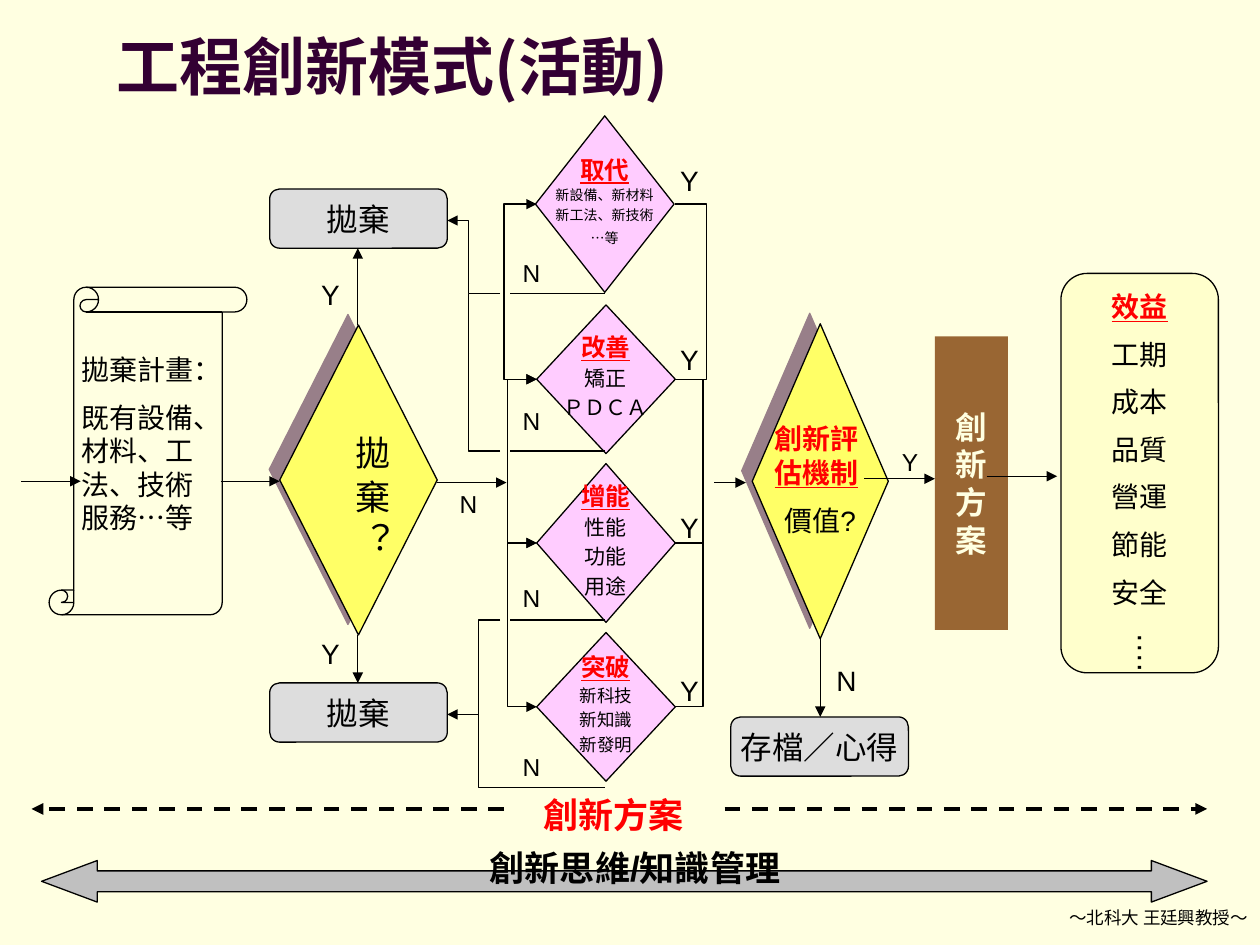
from dataclasses import dataclass, replace
from typing import Optional, Sequence

from lxml import etree
from pptx import Presentation
from pptx import util as u
from pptx.dml.color import RGBColor
from pptx.enum import dml, shapes, text
from pptx.oxml import ns

BLACK, RED, PURPLE = "000000", "FF0000", "330033"
GREY, PINK, YELLOW, CREAM = "DDDDDD", "FFCCFF", "FFFF66", "FFFFE1"
KIND = shapes.MSO_SHAPE
LEFT, CENTER, RIGHT = text.PP_ALIGN.LEFT, text.PP_ALIGN.CENTER, text.PP_ALIGN.RIGHT


@dataclass
class Line:
    words: str
    size: float
    color: str = BLACK
    bold: bool = False
    underline: bool = False
    align: int = CENTER
    spacing: float = 1.0
    gap: float = 0.5  # space before, as a share of the font size
    font: str = "Arial"
    underlined_end: str = ""


@dataclass
class Box:
    left: float
    top: float
    width: float
    height: float


@dataclass
class Route:
    points: Sequence[tuple]
    start_arrow: bool = False
    end_arrow: bool = False
    width: float = 0.75
    dashed: bool = False


def rgb(value: str) -> RGBColor:
    return RGBColor.from_string(value)


def place(box: Box) -> list:
    return [u.Inches(v) for v in (box.left, box.top, box.width, box.height)]


def write(shape, lines: Sequence[Line], wrap: bool) -> None:
    frame = shape.text_frame
    frame.word_wrap = wrap
    frame.text = "\n".join(line.words for line in lines)
    for paragraph, line in zip(frame.paragraphs, lines):
        paragraph.alignment = line.align
        paragraph.line_spacing = line.spacing
        paragraph.space_before = u.Pt(line.size * line.gap)
        if line.underlined_end:
            paragraph.add_run().text = line.underlined_end
        for index, run in enumerate(paragraph.runs):
            run.font.name = line.font
            run.font.size = u.Pt(line.size)
            run.font.bold = line.bold
            run.font.underline = line.underline or index > 0
            run.font.color.rgb = rgb(line.color)


def add_label(slide, box: Box, lines: Sequence[Line], vertical: bool = False):
    shape = slide.shapes.add_textbox(*place(box))
    write(shape, lines, True)
    shape.text_frame.auto_size = text.MSO_AUTO_SIZE.SHAPE_TO_FIT_TEXT
    if vertical:
        shape.text_frame._txBody.bodyPr.set("vert", "eaVert")
    return shape


def add_block(slide, kind, box: Box, fill: Optional[str],
              lines: Sequence[Line] = (), outlined: bool = True):
    shape = slide.shapes.add_shape(kind, *place(box))
    shape.shadow.inherit = False
    if fill:
        shape.fill.solid()
        shape.fill.fore_color.rgb = rgb(fill)
    else:
        shape.fill.background()
    if outlined:
        shape.line.color.rgb = rgb(BLACK)
        shape.line.width = u.Pt(0.75)
    else:
        shape.line.fill.background()
    if lines:
        shape.text_frame.vertical_anchor = text.MSO_ANCHOR.MIDDLE
        write(shape, lines, False)
    return shape


def add_decision(slide, box: Box) -> None:
    """Yellow diamond with a shadow to the upper left."""
    shape = add_block(slide, KIND.DIAMOND, box, YELLOW)
    effects = shape._element.spPr.find(ns.qn("a:effectLst"))
    shadow = etree.SubElement(effects, ns.qn("a:outerShdw"), dist=str(u.Pt(8.5)),
                              dir="13500000", algn="ctr", rotWithShape="0")
    color = etree.SubElement(shadow, ns.qn("a:srgbClr"), val=PURPLE)
    etree.SubElement(color, ns.qn("a:alpha"), val="50000")


def add_route(slide, route: Route) -> None:
    points = [(u.Inches(x), u.Inches(y)) for x, y in route.points]
    if len(points) == 2:
        shape = slide.shapes.add_connector(
            shapes.MSO_CONNECTOR.STRAIGHT, *points[0], *points[1])
        etree.SubElement(shape._element.spPr, ns.qn("a:effectLst"))
    else:
        builder = slide.shapes.build_freeform(*points[0])
        builder.add_line_segments(points[1:], close=False)
        shape = builder.convert_to_shape()
        shape.shadow.inherit = False
        shape.fill.background()
    shape.line.color.rgb = rgb(BLACK)
    shape.line.width = u.Pt(route.width)
    if route.dashed:
        shape.line.dash_style = dml.MSO_LINE.DASH
    for tag, wanted in (("a:headEnd", route.start_arrow), ("a:tailEnd", route.end_arrow)):
        if wanted:
            etree.SubElement(shape.line._get_or_add_ln(), ns.qn(tag), type="triangle")


def arrow(*points: tuple) -> Route:
    return Route(points, end_arrow=True)


def build_slide(slide) -> None:
    slide.background.fill.solid()
    slide.background.fill.fore_color.rgb = rgb(CREAM)

    # Title
    title = add_label(slide, Box(0.83, 0.21, 8.67, 0.62), [
        Line("工程創新模式(活動)", 36, PURPLE, True, align=LEFT, gap=0,
             font="Noto Sans CJK SC")])
    title.text_frame.auto_size = text.MSO_AUTO_SIZE.NONE
    title.text_frame.vertical_anchor = text.MSO_ANCHOR.MIDDLE

    # Input plan and abandon decision
    add_block(slide, KIND.VERTICAL_SCROLL, Box(0.39, 2.28, 1.57, 2.6), None)
    add_label(slide, Box(0.55, 2.75, 1.17, 1.57), [
        Line(words, 16, align=LEFT)
        for words in ("拋棄計畫：", "既有設備、材料、工法、技術服務…等")])
    add_decision(slide, Box(2.22, 2.58, 1.25, 2.46))
    add_label(slide, Box(2.64, 3.36, 0.53, 1.02),
              [Line("拋 棄 ？", 20, align=LEFT)], vertical=True)

    # Outcome boxes
    for left, top, words in ((2.14, 1.5, "拋棄"), (2.14, 5.42, "拋棄"),
                             (5.8, 5.69, "存檔／心得")):
        add_block(slide, KIND.ROUNDED_RECTANGLE, Box(left, top, 1.41, 0.47), GREY,
                  [Line(words, 18, gap=0)])

    # Innovation methods
    methods = (
        (4.25, 0.92, 1.4, 8, "取代", ("新設備、新材料", "新工法、新技術", "…等")),
        (4.26, 2.42, 1.18, 12, "改善", ("矯正", "ＰＤＣＡ")),
        (4.26, 3.68, 1.26, 12, "增能", ("性能", "功能", "用途")),
        (4.26, 5.02, 1.18, 10, "突破", ("新科技", "新知識", "新發明")))
    for left, top, height, size, heading, details in methods:
        lines = [Line(heading, 14, RED, True, True, spacing=0.75)]
        lines += [Line(words, size, spacing=1 if words == "…等" else 0.75)
                  for words in details]
        add_block(slide, KIND.DIAMOND, Box(left, top, 1.1, height), PINK, lines)

    # Evaluation, solution and benefits
    add_decision(slide, Box(5.97, 2.57, 1.08, 2.5))
    add_label(slide, Box(6.05, 3.3, 0.92, 1.04), [
        Line("創新評", 16, RED, True, align=LEFT, underlined_end="估機制"),
        Line("價值?", 16)])
    solution = Line("", 18, CREAM, True, gap=0, font="Times New Roman")
    add_block(slide, KIND.RECTANGLE, Box(7.42, 2.67, 0.58, 2.33), "996633",
              [replace(solution, words=character) for character in "創新方案"],
              outlined=False)
    benefits = add_block(
        slide, KIND.ROUNDED_RECTANGLE, Box(8.42, 2.17, 1.25, 3.17), "FFFFCC",
        [Line("效益", 16, RED, True, True)]
        + [Line(words, 16) for words in ("工期", "成本", "品質", "營運", "節能", "安全")])
    benefits.text_frame.margin_bottom = u.Inches(0.43)
    add_label(slide, Box(8.83, 4.92, 0.5, 0.58),
              [Line("….", 18, align=LEFT)], vertical=True)

    # Arrows along the main flow
    for route in (
            arrow((0.17, 3.82), (0.64, 3.82)), arrow((1.75, 3.82), (2.22, 3.82)),
            arrow((2.84, 2.58), (2.84, 1.97)), arrow((2.84, 5.04), (2.84, 5.42)),
            arrow((3.47, 3.83), (4.02, 3.83)), arrow((5.67, 3.83), (5.92, 3.83)),
            arrow((6.51, 5.07), (6.51, 5.69)), arrow((6.86, 3.8), (7.42, 3.8)),
            arrow((7.83, 3.78), (8.39, 3.78))):
        add_route(slide, route)

    # Brackets joining neighbouring methods
    middles = (1.62, 3.01, 4.31, 5.61)
    for upper, lower, trunk in zip(middles, middles[1:], (4, 4.03, 4.03)):
        add_route(slide, Route([(4.26, upper), (trunk, upper), (trunk, lower),
                                (4.26, lower)], True, True))
    for upper, lower, trunk in zip(middles, middles[1:], (5.61, 5.58, 5.58)):
        add_route(slide, Route([(5.36, upper), (trunk, upper), (trunk, lower),
                                (5.36, lower)]))

    # Rejected methods return to the abandon boxes
    for y in (2.33, 3.58, 4.92):
        add_route(slide, Route([(4.8, y), (4.05, y)]))
    add_route(slide, arrow((3.97, 2.33), (3.72, 2.33), (3.72, 1.75), (3.55, 1.75)))
    add_route(slide, Route([(3.97, 3.58), (3.72, 3.58), (3.72, 2.33)]))
    add_route(slide, arrow((3.97, 4.92), (3.8, 4.92), (3.8, 5.67), (3.55, 5.67)))
    add_route(slide, Route([(4.8, 6.25), (3.8, 6.25), (3.8, 5.67)]))

    # Yes and no labels
    for words, size, width, spots in (
            ("Y", 16, 0.43, ((2.45, 2.15), (2.45, 5), (5.3, 1.25), (5.3, 2.67),
                             (5.3, 4), (5.3, 5.3))),
            ("N", 16, 0.43, ((6.54, 5.22),)),
            ("N", 14, 0.36, ((3.55, 3.83), (4.05, 2), (4.05, 3.17), (4.05, 4.58),
                             (4.05, 5.92))),
            ("Y", 14, 0.36, ((7.06, 3.5),))):
        for left, top in spots:
            add_label(slide, Box(left, top, width, 0.35), [Line(words, size, align=LEFT)])

    # Foundation bands and credit
    for start, end in ((4, 0.25), (5.75, 9.58)):
        add_route(slide, Route([(start, 6.42), (end, 6.42)], False, True, 2.25, True))
    add_label(slide, Box(4.08, 6.25, 1.58, 0.43), [Line("創新方案", 20, RED, True)])
    band = add_block(slide, KIND.LEFT_RIGHT_ARROW, Box(0.33, 6.83, 9.25, 0.33), "C0C0C0")
    band.adjustments[1] = 1.34
    add_label(slide, Box(3.33, 6.67, 3.42, 0.43), [Line("創新思維/知識管理", 20, bold=True)])
    add_label(slide, Box(7.99, 7.15, 2.01, 0.27),
              [Line("～北科大 王廷興教授～", 10, align=RIGHT)])


def main() -> None:
    presentation = Presentation()
    presentation.slide_width, presentation.slide_height = u.Inches(10), u.Inches(7.5)
    build_slide(presentation.slides.add_slide(presentation.slide_layouts[6]))
    presentation.save("out.pptx")


if __name__ == "__main__":
    main()
